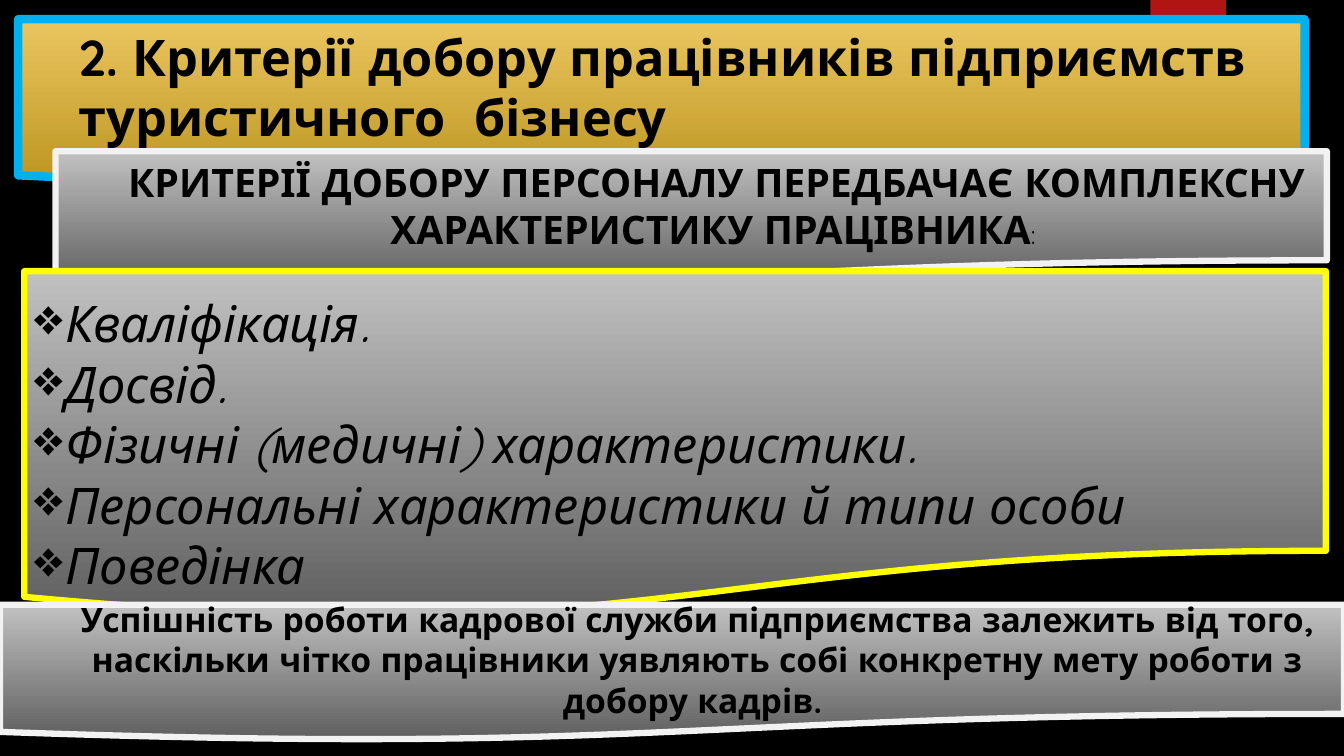
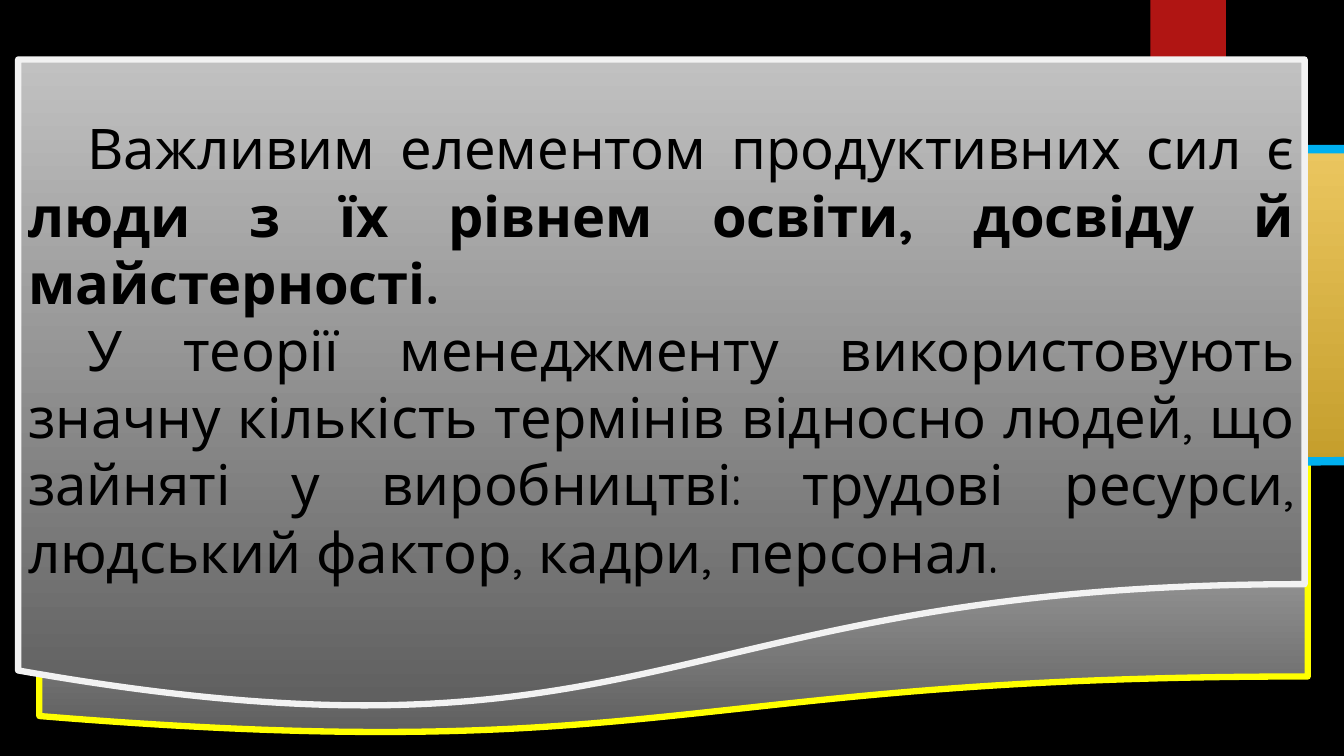
"""Build two slides on criteria for selecting staff in tourism businesses."""
from lxml import etree
from pptx import Presentation
from pptx.dml.color import RGBColor
from pptx.enum.shapes import MSO_SHAPE
from pptx.enum.text import MSO_ANCHOR, MSO_AUTO_SIZE, PP_ALIGN
from pptx.oxml.ns import qn
from pptx.util import Inches, Pt

DOCUMENT, RECTANGLE = MSO_SHAPE.FLOWCHART_DOCUMENT, MSO_SHAPE.RECTANGLE
LEFT, CENTER, JUSTIFY = PP_ALIGN.LEFT, PP_ALIGN.CENTER, PP_ALIGN.JUSTIFY
TOP, MIDDLE = MSO_ANCHOR.TOP, MSO_ANCHOR.MIDDLE

FONT = "Quicksand"
BLACK = RGBColor(0x00, 0x00, 0x00)
RED = RGBColor(0xB0, 0x15, 0x13)
BLUE = RGBColor(0x00, 0xB0, 0xF0)
WHITE = RGBColor(0xF2, 0xF2, 0xF2)
YELLOW = RGBColor(0xFF, 0xFF, 0x00)
GOLD = (RGBColor(0xEB, 0xC6, 0x5F), RGBColor(0xBB, 0x94, 0x1F))
GREY = (RGBColor(0xC1, 0xC1, 0xC1), RGBColor(0x5E, 0x5E, 0x5E))


def add_band(page, left, top, width, height, colors, line_color, line_width=4.5):
    """Add a wavy band with a vertical gradient and a thick outline."""
    band = page.shapes.add_shape(
        DOCUMENT, Inches(left), Inches(top), Inches(width), Inches(height))
    band.shadow.inherit = False
    band.fill.gradient()
    band.fill.gradient_angle = 270
    for stop, color in zip(band.fill.gradient_stops, colors):
        stop.color.rgb = color
    band.line.color.rgb = line_color
    band.line.width = Pt(line_width)
    return band


def write(box, paragraphs, align, margin=0, indent=0, bullet=None, anchor=MIDDLE):
    """Fill a box with paragraphs of (text, size, bold, italic) spans."""
    frame = box.text_frame
    frame.word_wrap = True
    frame.auto_size = MSO_AUTO_SIZE.NONE
    frame.vertical_anchor = anchor
    for index, spans in enumerate(paragraphs):
        para = frame.add_paragraph() if index else frame.paragraphs[0]
        para.alignment = align
        para.line_spacing = 1.0
        properties = para._p.get_or_add_pPr()
        properties.set("marL", str(Inches(margin)))
        properties.set("indent", str(Inches(indent)))
        if bullet:
            etree.SubElement(properties, qn("a:buChar")).set("char", bullet)
        for text, size, bold, italic in spans:
            span = para.add_run()
            span.text = text
            span.font.name = FONT
            span.font.size = Pt(size)
            span.font.bold = bold
            span.font.italic = italic
            span.font.color.rgb = BLACK


deck = Presentation()
deck.slide_width, deck.slide_height = Inches(13.33), Inches(7.5)
master = deck.slide_master
master.background.fill.solid()
master.background.fill.fore_color.rgb = BLACK

page = deck.slides.add_slide(deck.slide_layouts[5])
tab = page.shapes.add_shape(RECTANGLE, Inches(11.41), 0, Inches(0.75), Inches(1.25))
tab.shadow.inherit = False
tab.fill.solid()
tab.fill.fore_color.rgb = RED
tab.line.fill.background()
master.shapes._spTree.append(tab._element)

add_band(page, 0.18, 0.19, 12.76, 1.66, GOLD, BLUE, 6)
title = page.shapes.title
title.left, title.top = Inches(0.18), Inches(0.19)
title.width, title.height = Inches(12.76), Inches(1.33)
page.shapes._spTree.append(title._element)
write(title, [[("2. Критерії добору працівників підприємств туристичного  бізнесу",
                36, True, False)]], LEFT, margin=0.5)

summary = add_band(page, 0.55, 1.5, 12.61, 1.35, GREY, WHITE)
write(summary, [[("КРИТЕРІЇ ДОБОРУ ПЕРСОНАЛУ ПЕРЕДБАЧАЄ КОМПЛЕКСНУ "
                  "ХАРАКТЕРИСТИКУ ПРАЦІВНИКА", 28, True, False),
                 (": ", 18, False, False)]], CENTER, margin=0.5)

criteria = add_band(page, 0.24, 2.69, 12.91, 3.46, GREY, YELLOW)
criteria.text_frame.margin_top = Inches(0.21)
criteria.text_frame.margin_bottom = 0
names = ["Кваліфікація.", "Досвід.", "Фізичні (медичні) характеристики.",
         "Персональні характеристики й типи особи", "Поведінка"]
write(criteria, [[(name, 36, False, True)] for name in names], LEFT,
      margin=0.31, indent=-0.31, bullet="❖", anchor=TOP)

conclusion = add_band(page, 0, 6, 13.33, 1.35, GREY, WHITE)
write(conclusion, [[("Успішність роботи кадрової служби підприємства залежить від того, "
                     "наскільки чітко працівники уявляють собі конкретну мету роботи "
                     "з добору кадрів. ", 24, True, False)]], CENTER, margin=0.5)

page = deck.slides.add_slide(deck.slide_layouts[6])
add_band(page, 0.39, 4.33, 12.58, 2.97, GREY, YELLOW)
add_band(page, 0.39, 1.48, 13.11, 3.86, GOLD, BLUE, 6)
people = add_band(page, 0.18, 0.59, 12.76, 6.49, GREY, WHITE)
people.text_frame.margin_top = Inches(0.54)
write(people, [
    [("Важливим елементом продуктивних сил є ", 40, False, False),
     ("люди з їх рівнем освіти, досвіду й майстерності. ", 40, True, False)],
    [("У теорії менеджменту використовують значну кількість термінів відносно "
      "людей, що зайняті у виробництві: трудові ресурси, людський фактор, кадри, "
      "персонал.", 40, False, False)],
], JUSTIFY, indent=0.59, anchor=TOP)

deck.save("out.pptx")
